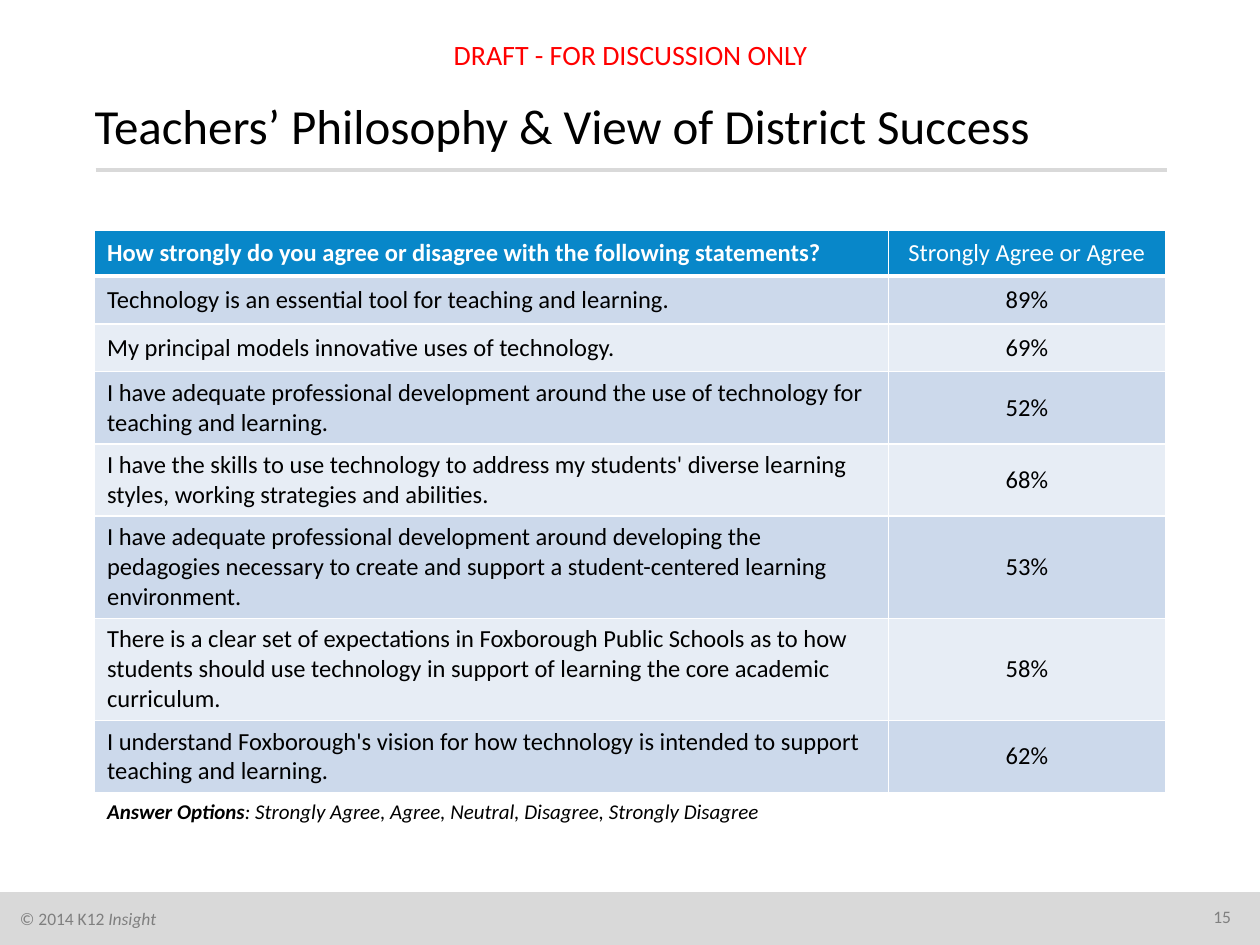
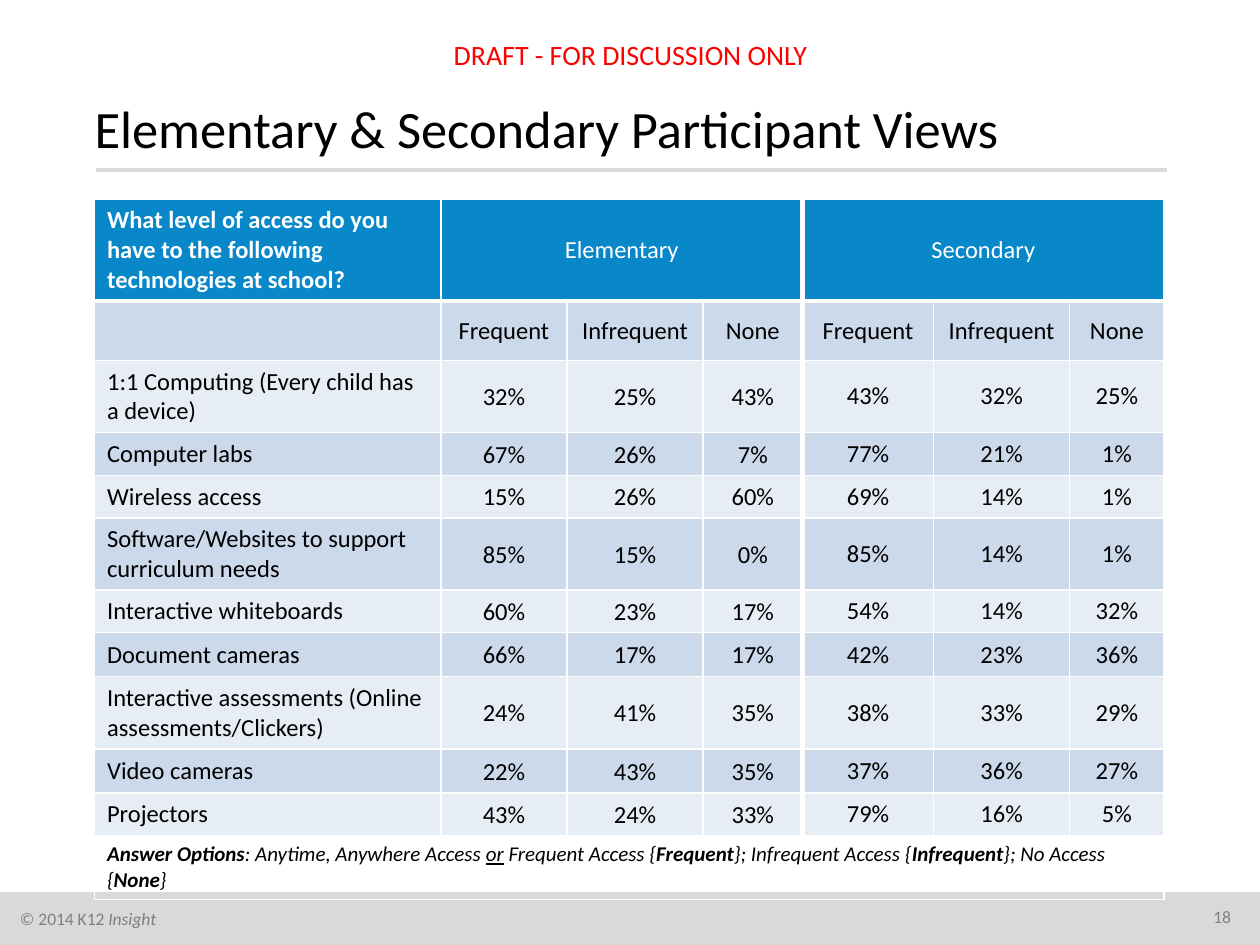
from lxml import etree
from pptx import Presentation
from pptx.dml.color import RGBColor
from pptx.enum import shapes, text
from pptx.oxml import ns
from pptx.util import Inches, Pt

WHITE, BLACK, RED = "FFFFFF", "000000", "FF0000"
HEADER_BLUE, DARK_ROW, LIGHT_ROW = "0887C9", "CCD9EB", "E7EDF5"
BAND_GRAY, FOOTER_GRAY, NUMBER_GRAY = "D9D9D9", "7F7F7F", "808080"
LEFT, CENTER, RIGHT = text.PP_ALIGN.LEFT, text.PP_ALIGN.CENTER, text.PP_ALIGN.RIGHT
TOP, MIDDLE = text.MSO_ANCHOR.TOP, text.MSO_ANCHOR.MIDDLE


def write(frame, runs, size, color, align=LEFT, anchor=TOP, margin=None, styles=""):
    """Fill a text frame; runs is a string or (text, styles) pairs, styles being letters of "biu"."""
    frame.word_wrap = True
    frame.vertical_anchor = anchor
    if margin is not None:
        frame.margin_left = frame.margin_right = Inches(margin)
        frame.margin_top = frame.margin_bottom = Inches(margin)
    paragraph = frame.paragraphs[0]
    paragraph.alignment = align
    for words, run_styles in [(runs, styles)] if isinstance(runs, str) else runs:
        run = paragraph.add_run()
        run.text = words
        font = run.font
        font.name, font.size = "Calibri", Pt(size)
        font.color.rgb = RGBColor.from_string(color)
        font.bold, font.italic, font.underline = (letter in run_styles for letter in "biu")


def style_cell(cell, fill, left=1, right=1, top=1, bottom=1):
    """Give a cell its fill and white borders, with border widths in points."""
    if fill:
        cell.fill.solid()
        cell.fill.fore_color.rgb = RGBColor.from_string(fill)
    else:
        cell.fill.background()
    properties = cell._tc.get_or_add_tcPr()
    for position, (side, width) in enumerate(zip("LRTB", (left, right, top, bottom))):
        line = etree.Element(ns.qn(f"a:ln{side}"), w=str(Pt(width)))
        solid = etree.SubElement(line, ns.qn("a:solidFill"))
        etree.SubElement(solid, ns.qn("a:srgbClr"), val=WHITE)
        properties.insert(position, line)


# In a row, None continues the cell on its left.
PAGES = [
    dict(
        title="Teachers’ Philosophy & View of District Success",
        title_size=28,
        number="15",
        top=1.83,
        divider=None,
        widths=[6.3, 2.2],
        heights=[0.36, 0.38, 0.38, 0.53, 0.53, 0.75, 0.75, 0.53, 0.31],
        rows=[
            ["How strongly do you agree or disagree with the following statements?",
             "Strongly Agree or Agree"],
            ["Technology is an essential tool for teaching and learning.", "89%"],
            ["My principal models innovative uses of technology.", "69%"],
            ["I have adequate professional development around the use of technology "
             "for teaching and learning.", "52%"],
            ["I have the skills to use technology to address my students' diverse "
             "learning styles, working strategies and abilities.", "68%"],
            ["I have adequate professional development around developing the pedagogies "
             "necessary to create and support a student-centered learning environment.", "53%"],
            ["There is a clear set of expectations in Foxborough Public Schools as to how "
             "students should use technology in support of learning the core academic "
             "curriculum.", "58%"],
            ["I understand Foxborough's vision for how technology is intended to support "
             "teaching and learning.", "62%"],
        ],
        answers=[("Answer Options", "bi"),
                 (": Strongly Agree, Agree, Neutral, Disagree, Strongly Disagree", "i")],
    ),
    dict(
        title="Elementary & Secondary Participant Views",
        title_size=30,
        number="18",
        top=1.58,
        divider=4,
        widths=[2.75, 1, 1.08, 0.79, 1.04, 1.08, 0.75],
        heights=[0.53, 0.47, 0.49, 0.34, 0.33, 0.56, 0.27, 0.35, 0.56, 0.35, 0.33, 0.3],
        rows=[
            ["What level of access do you have to the following technologies at school?",
             "Elementary", None, None, "Secondary", None, None],
            ["", *["Frequent", "Infrequent", "None"] * 2],
            ["1:1 Computing (Every child has a device)", "32%", "25%", "43%", "43%", "32%", "25%"],
            ["Computer labs", "67%", "26%", "7%", "77%", "21%", "1%"],
            ["Wireless access", "15%", "26%", "60%", "69%", "14%", "1%"],
            ["Software/Websites to support curriculum needs",
             "85%", "15%", "0%", "85%", "14%", "1%"],
            ["Interactive whiteboards", "60%", "23%", "17%", "54%", "14%", "32%"],
            ["Document cameras", "66%", "17%", "17%", "42%", "23%", "36%"],
            ["Interactive assessments (Online assessments/Clickers)",
             "24%", "41%", "35%", "38%", "33%", "29%"],
            ["Video cameras", "22%", "43%", "35%", "37%", "36%", "27%"],
            ["Projectors", "43%", "24%", "33%", "79%", "16%", "5%"],
        ],
        answers=[("Answer Options", "bi"), (": Anytime, Anywhere Access ", "i"), ("or", "iu"),
                 (" Frequent Access {", "i"), ("Frequent", "bi"),
                 ("}; Infrequent Access {", "i"), ("Infrequent", "bi"),
                 ("}; No Access {", "i"), ("None", "bi"), ("}", "i")],
    ),
]

presentation = Presentation()
presentation.slide_width, presentation.slide_height = Inches(10), Inches(7.5)
layout = presentation.slide_layouts[5]
slides = [presentation.slides.add_slide(layout) for page in PAGES]

# Band, copyright line and title rule are drawn once, then moved to the shared layout.
drawing = slides[0].shapes
band = drawing.add_shape(shapes.MSO_SHAPE.RECTANGLE,
                         Inches(0), Inches(7.08), Inches(10), Inches(0.42))
band.shadow.inherit = False
band.fill.solid()
band.fill.fore_color.rgb = RGBColor.from_string(BAND_GRAY)
band.line.fill.background()

copyright_line = drawing.add_textbox(Inches(0.06), Inches(7.16), Inches(2.69), Inches(0.27))
write(copyright_line.text_frame, [("© 2014 K12 ", ""), ("Insight", "i")], 10, FOOTER_GRAY)

title_rule = drawing.add_connector(shapes.MSO_CONNECTOR.STRAIGHT,
                                   Inches(0.76), Inches(1.35), Inches(9.26), Inches(1.35))
title_rule.line.color.rgb = RGBColor.from_string(BAND_GRAY)
title_rule.line.width = Pt(2)
etree.SubElement(title_rule.element.spPr, ns.qn("a:effectLst"))

for shape in (band, copyright_line, title_rule):
    layout.shapes.element.append(shape.element)

for slide, page in zip(slides, PAGES):
    title = slide.shapes.title
    title.left, title.top = Inches(0.75), Inches(0.76)
    title.width, title.height = Inches(8.49), Inches(0.56)
    write(title.text_frame, page["title"], page["title_size"], BLACK, margin=0)
    title.text_frame.auto_size = text.MSO_AUTO_SIZE.NONE

    widths, heights, divider = page["widths"], page["heights"], page["divider"]
    rows = page["rows"] + [[page["answers"]] + [None] * (len(widths) - 1)]
    table = slide.shapes.add_table(len(rows), len(widths), Inches(0.75), Inches(page["top"]),
                                   Inches(sum(widths)), Inches(sum(heights))).table
    for column, width in zip(table.columns, widths):
        column.width = Inches(width)
    for row, height in zip(table.rows, heights):
        row.height = Inches(height)

    for r, values in enumerate(rows):
        is_header, is_answers = r == 0, r == len(rows) - 1
        if is_header:
            fill = HEADER_BLUE
        elif is_answers:
            fill = None
        else:
            fill = DARK_ROW if r % 2 else LIGHT_ROW
        for c, value in enumerate(values):
            cell = table.cell(r, c)
            end = c + 1
            while end < len(values) and values[end] is None:
                end += 1
            at_divider = divider and not is_answers
            style_cell(cell, fill,
                       left=3 if at_divider and c == divider else 1,
                       right=3 if at_divider and end == divider else 1,
                       bottom=3 if is_header else 1)
            if value is None:
                continue
            if end > c + 1:
                cell.merge(table.cell(r, end - 1))
            cell.vertical_anchor = MIDDLE
            if divider and r > 1 and 0 < c < divider:
                cell.margin_left = cell.margin_right = cell.margin_top = Inches(0.01)
                cell.margin_bottom = 0
            if value:
                write(cell.text_frame, value, 12 if is_answers else 14,
                      WHITE if is_header else BLACK, align=CENTER if c else LEFT,
                      anchor=None, styles="b" if is_header and c == 0 else "")

    page_number = slide.shapes.add_textbox(Inches(9.33), Inches(7.19), Inches(0.44), Inches(0.21))
    write(page_number.text_frame, page["number"], 10, NUMBER_GRAY, align=RIGHT, margin=0)

    draft_note = slide.shapes.add_textbox(Inches(3.42), Inches(0.23), Inches(3.17), Inches(0.4))
    write(draft_note.text_frame, "DRAFT - FOR DISCUSSION ONLY", 16, RED,
          align=CENTER, anchor=MIDDLE)

presentation.save("out.pptx")
